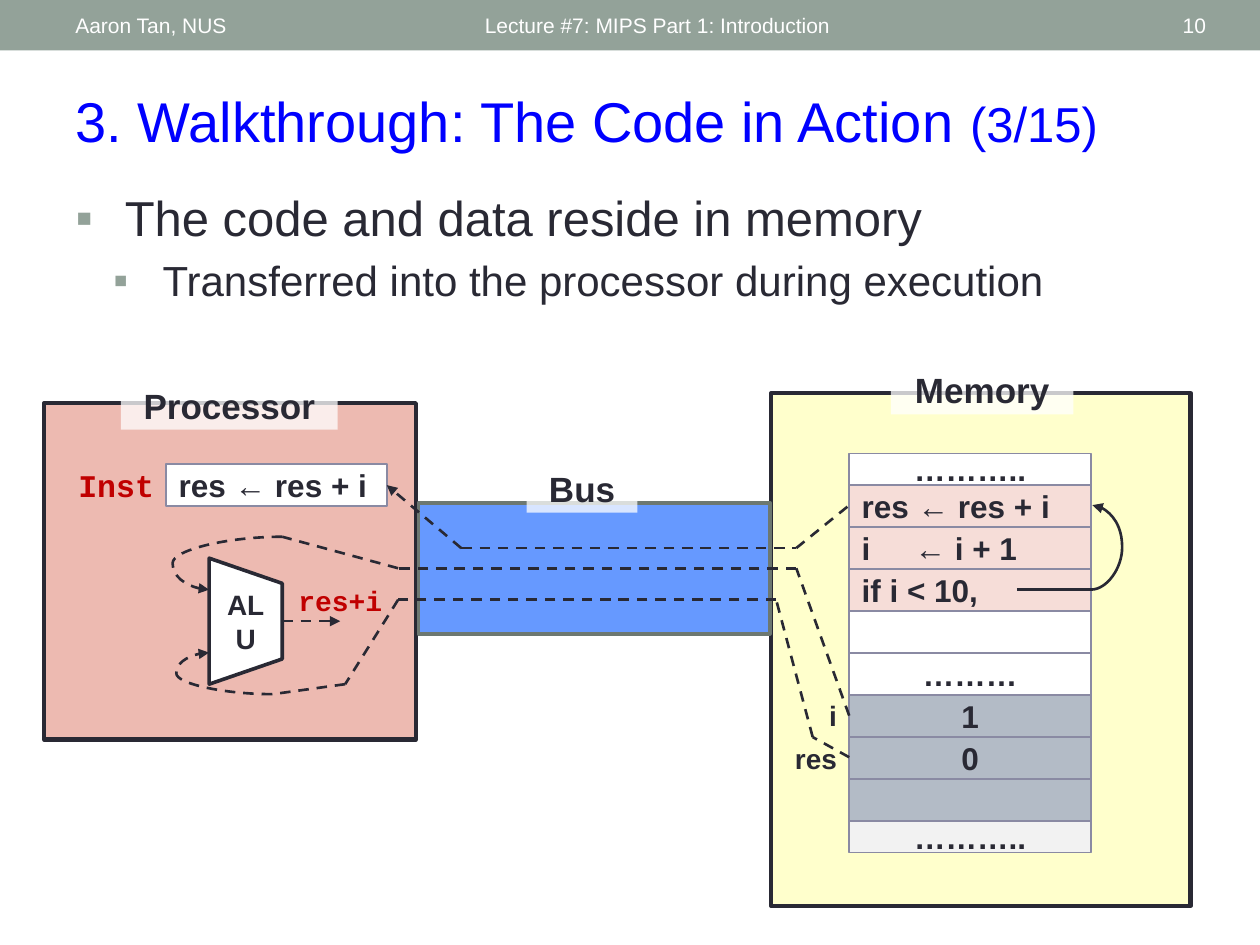
from lxml.etree import SubElement
from pptx import Presentation
from pptx.dml.color import RGBColor
from pptx.enum.dml import MSO_LINE
from pptx.enum.shapes import MSO_CONNECTOR, MSO_SHAPE
from pptx.enum.text import MSO_ANCHOR, MSO_AUTO_SIZE, PP_ALIGN
from pptx.oxml.ns import qn
from pptx.util import Inches, Pt

COLORS = {
    "ink": "292934", "white": "FFFFFF", "header": "93A299", "title": "0000FF",
    "processor": "EDBAB1", "memory": "FFFFCC", "bus": "6699FF", "bus_line": "6D7871",
    "code": "F6DDD8", "data": "B3BBC6", "rest": "F2F2F2", "cell_line": "8A8AA3",
    "red": "C00000",
}
LEFT, CENTER, RIGHT = PP_ALIGN.LEFT, PP_ALIGN.CENTER, PP_ALIGN.RIGHT
ROW = 1 / 3
MEMORY_LEFT, MEMORY_WIDTH = 6.74, 1.92


def color(name):
    return RGBColor.from_string(COLORS[name])


def write(paragraph, text, size=18, font="Arial", ink="ink", bold=False,
          align=LEFT, spacing=None):
    """Add a formatted run to a paragraph."""
    paragraph.alignment = align
    if spacing:
        paragraph.line_spacing = spacing
    run = paragraph.add_run()
    run.text = text
    run.font.size, run.font.name, run.font.bold = Pt(size), font, bold
    run.font.color.rgb = color(ink)


def place(shape, left, top, width, height):
    shape.left, shape.top = Inches(left), Inches(top)
    shape.width, shape.height = Inches(width), Inches(height)


def add_label(slide, box, text, **text_format):
    shape = slide.shapes.add_textbox(*map(Inches, box))
    frame = shape.text_frame
    frame.word_wrap, frame.vertical_anchor = True, MSO_ANCHOR.MIDDLE
    write(frame.paragraphs[0], text, **text_format)


def add_box(slide, box, fill, line=None, width=1, text=None,
            kind=MSO_SHAPE.RECTANGLE, **text_format):
    shape = slide.shapes.add_shape(kind, *map(Inches, box))
    shape.shadow.inherit = False
    shape.fill.solid()
    shape.fill.fore_color.rgb = color(fill)
    if line:
        shape.line.color.rgb = color(line)
        shape.line.width = Pt(width)
    else:
        shape.line.fill.background()
    if text:
        shape.text_frame.vertical_anchor = MSO_ANCHOR.MIDDLE
        write(shape.text_frame.paragraphs[0], text, **text_format)
    return shape


def add_caption(slide, box, text):
    """Add a translucent caption that sits on the edge of a block."""
    shape = add_box(slide, box, "white", text=text, size=20, bold=True,
                    align=CENTER, spacing=0.85)
    fill = shape.fill._xPr.find(qn("a:solidFill"))
    SubElement(fill[0], qn("a:alpha"), val="75000")
    frame = shape.text_frame
    frame.vertical_anchor = MSO_ANCHOR.TOP
    frame.margin_left = frame.margin_right = Inches(0.07)
    frame.margin_top = frame.margin_bottom = Inches(0.03)


def add_line(slide, start, end, dashed=True, arrow=False, bend=None):
    """Add a straight line, or a curve whose middle lies at the given bend."""
    kind = MSO_CONNECTOR.CURVE if bend else MSO_CONNECTOR.STRAIGHT
    connector = slide.shapes.add_connector(kind, *map(Inches, start + end))
    connector.line.color.rgb = color("ink")
    connector.line.width = Pt(1.5)
    if dashed:
        connector.line.dash_style = MSO_LINE.DASH
    properties = connector._element.spPr
    if bend:
        guides = properties.find(qn("a:prstGeom")).find(qn("a:avLst"))
        SubElement(guides, qn("a:gd"), name="adj1", fmla=f"val {round(bend * 100000)}")
    if arrow:
        SubElement(properties.find(qn("a:ln")), qn("a:tailEnd"), type="triangle")
    SubElement(properties, qn("a:effectLst"))


def add_path(slide, *points):
    for start, end in zip(points, points[1:]):
        add_line(slide, start, end)


def add_header(slide):
    add_box(slide, (0, 0, 10, 0.4), "header")
    for left, width, text, align in (
        (0.5, 3.17, "Aaron Tan, NUS", LEFT),
        (3.75, 4.5, "Lecture #7: MIPS Part 1: Introduction", LEFT),
        (8.72, 0.95, "10", RIGHT),
    ):
        add_label(slide, (left, 0.02, width, 0.36), text, size=12, ink="white", align=align)


def fill_placeholders(slide):
    title, body = slide.shapes.title, slide.placeholders[1]
    place(title, 0.5, 0.64, 9, 0.64)
    place(body, 0.5, 1.44, 9, 1.58)
    for shape in (title, body):
        shape.text_frame.auto_size = MSO_AUTO_SIZE.NONE
        shape.text_frame.vertical_anchor = MSO_ANCHOR.TOP
    heading = title.text_frame.paragraphs[0]
    write(heading, "3. Walkthrough: The Code in Action ", size=32, ink="title")
    write(heading, "(3/15)", size=28, ink="title")

    bullets = (("The code and data reside in memory", 28, 0.39, 0),
               ("Transferred into the processor during execution", 24, 0.69, 4.8))
    for level, (text, size, margin, before) in enumerate(bullets):
        frame = body.text_frame
        paragraph = frame.add_paragraph() if level else frame.paragraphs[0]
        paragraph.level = level
        properties = paragraph._p.get_or_add_pPr()
        properties.set("marL", str(Inches(margin)))
        properties.set("indent", str(Inches(-0.39)))
        bullet_color = SubElement(properties, qn("a:buClr"))
        SubElement(bullet_color, qn("a:srgbClr"), val=COLORS["header"])
        SubElement(properties, qn("a:buFont"), typeface="Arial")
        SubElement(properties, qn("a:buChar"), char="▪")
        paragraph.space_before = Pt(before)
        write(paragraph, text, size=size)


def add_memory(slide):
    rows = (
        ("………..", "white", CENTER, 0.25), ("res ← res + i", "code", LEFT, ROW),
        ("i\t← i + 1", "code", LEFT, ROW), ("if i < 10,", "code", LEFT, ROW),
        (None, "white", CENTER, ROW), ("………", "white", CENTER, ROW),
        ("1", "data", CENTER, ROW), ("0", "data", CENTER, ROW),
        (None, "data", CENTER, ROW), ("………..", "rest", CENTER, 0.25),
    )
    top = 3.6
    for text, fill, align, height in rows:
        cell = add_box(slide, (MEMORY_LEFT, top, MEMORY_WIDTH, height), fill, "cell_line",
                       text=text, bold=True, align=align)
        if text and "\t" in text:
            properties = cell.text_frame.paragraphs[0]._p.get_or_add_pPr()
            tabs = SubElement(properties, qn("a:tabLst"))
            SubElement(tabs, qn("a:tab"), pos=str(Inches(0.42)), algn="l")
        top += height
    for text, top in (("i", 5.51), ("res", 5.85)):
        add_label(slide, (6.16, top, 0.58, ROW), text, size=16, bold=True, align=RIGHT)


def add_processor_parts(slide):
    code = {"font": "Courier New", "ink": "red", "bold": True}
    add_label(slide, (0.49, 3.68, 0.83, ROW), "Inst", align=RIGHT, **code)
    add_box(slide, (1.32, 3.68, 1.75, ROW), "white", "cell_line",
            text="res ← res + i", bold=True)
    alu = add_box(slide, (1.45, 4.64, 1, 0.58), "white", "ink", 2.08, "ALU",
                  MSO_SHAPE.FLOWCHART_MANUAL_OPERATION, size=16, bold=True, align=CENTER)
    alu.rotation = 270
    alu.text_frame._txBody.bodyPr.set("vert", "vert")
    add_label(slide, (2.24, 4.6, 0.92, ROW), "res+i", size=16, align=CENTER, **code)


def add_flows(slide):
    # Instruction fetch
    add_line(slide, (3.66, 4.35), (3.07, 3.85), arrow=True)
    add_path(slide, (3.66, 4.35), (6.32, 4.35), (6.74, 4.01))
    # Operands i and res
    add_path(slide, (6.74, 5.68), (6.32, 4.51), (3.16, 4.51), (2.24, 4.26))
    add_line(slide, (2.24, 4.26), (1.66, 4.68), arrow=True, bend=1.5)
    add_path(slide, (6.74, 6.01), (6.45, 5.85), (6.16, 4.76), (3.16, 4.76),
             (2.74, 5.43), (2.16, 5.51))
    add_line(slide, (2.16, 5.51), (1.66, 5.18), arrow=True, bend=1.52)
    # Result
    add_line(slide, (2.24, 4.93), (2.7, 4.93), arrow=True)
    # Loop back to the first instruction
    add_line(slide, (8.07, 4.68), (8.66, 4.68), dashed=False)
    add_line(slide, (8.66, 4.68), (8.67, 4.01), dashed=False, arrow=True, bend=25)


def main():
    presentation = Presentation()
    presentation.slide_width, presentation.slide_height = Inches(10), Inches(7.5)
    slide = presentation.slides.add_slide(presentation.slide_layouts[1])
    add_header(slide)
    fill_placeholders(slide)
    # Blocks and captions
    add_box(slide, (0.35, 3.2, 2.95, 2.67), "processor", "ink", 2.5)
    add_caption(slide, (0.96, 3.07, 1.72, 0.34), "Processor")
    add_box(slide, (6.12, 3.12, 3.33, 4.07), "memory", "ink", 2.5)
    add_caption(slide, (7.07, 2.95, 1.45, 0.34), "Memory")
    add_box(slide, (3.32, 3.99, 2.79, 1.04), "bus", "bus_line", 2.08)
    add_caption(slide, (4.18, 3.73, 0.88, 0.34), "Bus")
    # Contents and data flow
    add_memory(slide)
    add_processor_parts(slide)
    add_flows(slide)
    presentation.save("out.pptx")


if __name__ == "__main__":
    main()
